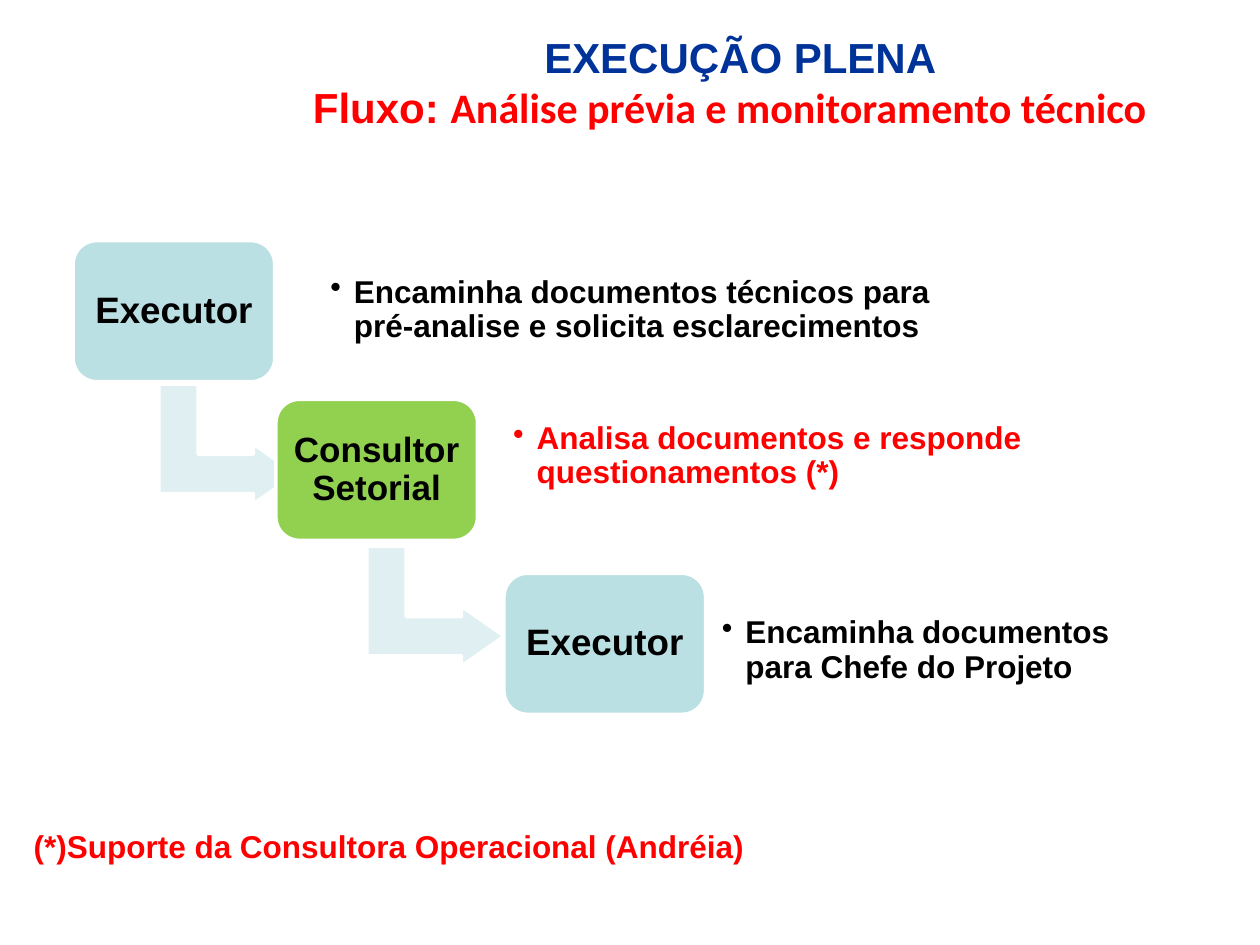
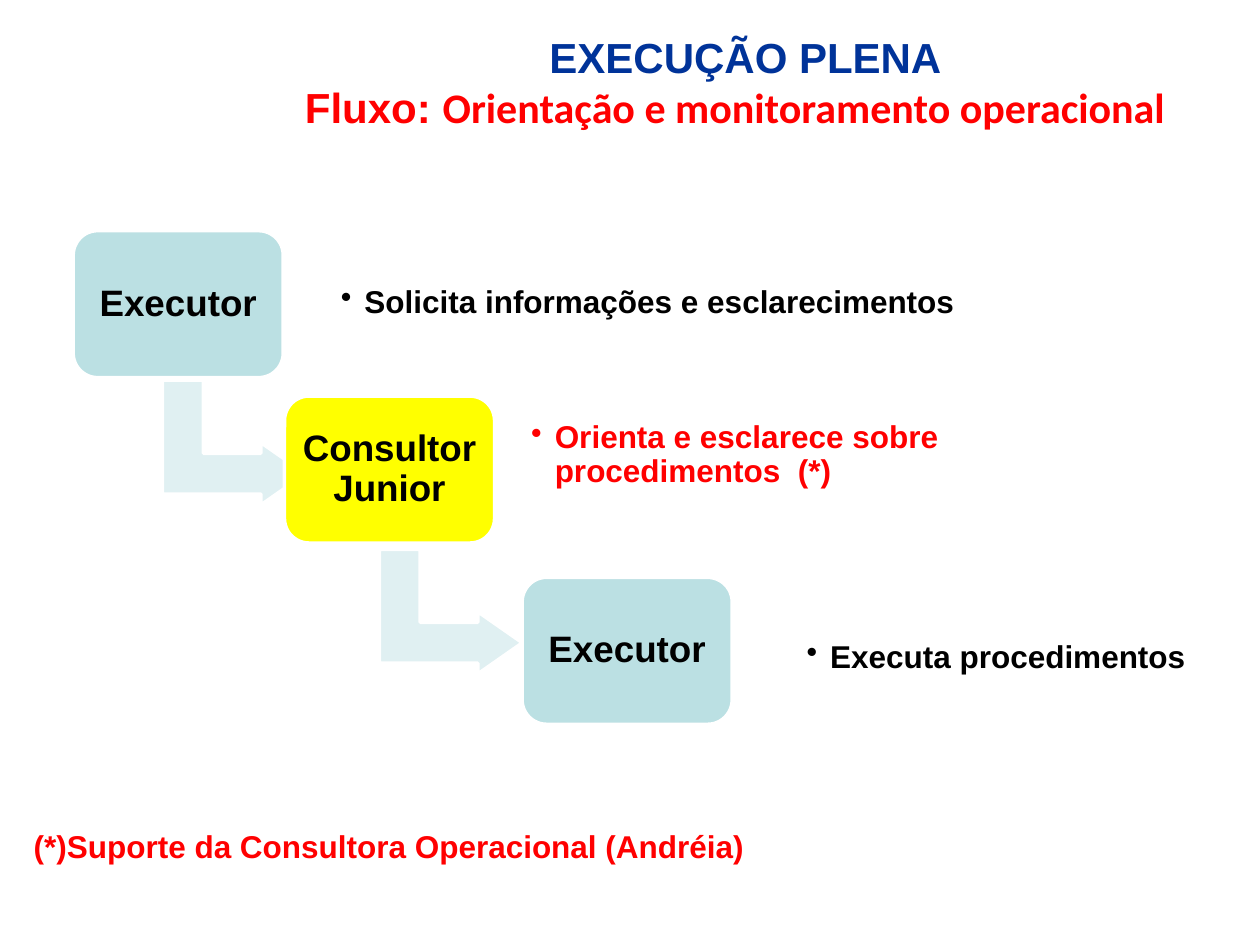
import pptx
import pptx.util
import pptx.dml.color
import pptx.enum.shapes
import pptx.enum.text
import pptx.oxml.ns
import lxml.etree

Pt = pptx.util.Pt
RGB = pptx.dml.color.RGBColor
Kind = pptx.enum.shapes.MSO_SHAPE
Align = pptx.enum.text.PP_ALIGN
Anchor = pptx.enum.text.MSO_ANCHOR

# Shared colours
NAVY = RGB(0x00, 0x33, 0x99)
RED = RGB(0xFF, 0x00, 0x00)
BLACK = RGB(0x00, 0x00, 0x00)
WHITE = RGB(0xFF, 0xFF, 0xFF)
TEAL = RGB(0xBB, 0xE0, 0xE3)
PALE = RGB(0xE0, 0xF0, 0xF2)
GREEN = RGB(0x92, 0xD0, 0x50)
YELLOW = RGB(0xFF, 0xFF, 0x00)

# Flow geometry at scale 1, in points
SPAN = 361.4
NODE = (115.2, 80.6)
STEPS = [(0, 0), (115.9, 90.7), (246.2, 190.1)]
ELBOW = (68.4, 78.5)
TURNS = [(54, 77), (57, 79)]
NOTE = 65.5

FOOT = "(*)Suporte da Consultora Operacional (Andréia)"


def say(frame, runs, size=18, color=BLACK, align=Align.LEFT, inset=(7.2, 3.6),
        anchor=Anchor.TOP, space=None, bullet=False, indent=0, more=False):
    """Write one bold paragraph; runs is a text or (text, font) pairs."""
    frame.word_wrap = True
    frame.vertical_anchor = anchor
    frame.margin_left = frame.margin_right = Pt(inset[0])
    frame.margin_top = frame.margin_bottom = Pt(inset[1])
    para = frame.add_paragraph() if more else frame.paragraphs[0]
    props = para._p.get_or_add_pPr()
    if indent:
        props.set("marL", str(Pt(indent)))
    if bullet:
        props.set("indent", str(-Pt(indent)))
        mark = lxml.etree.SubElement(props, pptx.oxml.ns.qn("a:buChar"))
        mark.set("char", "•")
    para.alignment = align
    para.line_spacing = space
    for text, face in [(runs, "Arial")] if isinstance(runs, str) else runs:
        run = para.add_run()
        run.text = text
        run.font.name = face
        run.font.size = Pt(size)
        run.font.bold = True
        run.font.color.rgb = color


def area(slide, left, top, width, height):
    box = slide.shapes.add_textbox(Pt(left), Pt(top), Pt(width), Pt(height))
    return box.text_frame


def block(slide, kind, left, top, size, fill, adjust):
    shape = slide.shapes.add_shape(
        kind, Pt(left), Pt(top), Pt(size[0]), Pt(size[1]))
    shape.shadow.inherit = False
    shape.fill.solid()
    shape.fill.fore_color.rgb = fill
    shape.line.color.rgb = WHITE
    shape.line.width = Pt(2)
    for i, value in enumerate(adjust):
        shape.adjustments[i] = value
    return shape


def title(slide, left, top, theme):
    frame = area(slide, left, top, 600, 64)
    say(frame, "EXECUÇÃO PLENA", size=24, color=NAVY,
        align=Align.CENTER, indent=12)
    say(frame, [("Fluxo: ", "Arial"), (theme, "Calibri")], size=24,
        color=RED, align=Align.CENTER, more=True)


def flow(slide, left, top, width, stages):
    """Draw a staircase of nodes, elbow arrows and notes."""
    scale = width / SPAN
    node = [side * scale for side in NODE]
    elbow = [side * scale for side in ELBOW]
    for i, (name, size, fill, note, ink, shift, wide) in enumerate(stages):
        x = left + STEPS[i][0] * scale
        y = top + STEPS[i][1] * scale
        # Arrow to the next node, lying behind it
        if i < len(TURNS):
            dx, dy = TURNS[i]
            arrow = block(slide, Kind.BENT_UP_ARROW, x + dx * scale,
                          y + dy * scale, elbow, PALE, (0.328, 0.25, 0.358))
            arrow.rotation = 90
        # Node
        card = block(slide, Kind.ROUNDED_RECTANGLE, x, y, node, fill, (0.167,))
        say(card.text_frame, name, size=size, align=Align.CENTER,
            inset=(6, 6), anchor=Anchor.MIDDLE, space=0.9)
        # Note beside the node
        frame = area(slide, x + shift[0] * scale, y + shift[1] * scale,
                     wide * scale, NOTE * scale)
        say(frame, note, color=ink, inset=(5, 5), anchor=Anchor.MIDDLE,
            space=0.9, bullet=True, indent=13.5)


def footer(slide, left, top):
    say(area(slide, left, top, 600, 30), FOOT, color=RED)


def main():
    deck = pptx.Presentation()
    deck.slide_width, deck.slide_height = Pt(720), Pt(540)
    pages = [
        ("Análise prévia e monitoramento técnico", 117, (41.8, 137.5, 361.4), [
            ("Executor", 21, TEAL, "Encaminha documentos técnicos para "
             "pré-analise e solicita esclarecimentos", BLACK, (142, 7), 386),
            ("Consultor Setorial", 20, GREEN, "Analisa documentos e responde "
             "questionamentos (*)", RED, (130.5, 0), 341),
            ("Executor", 21, TEAL, "Encaminha documentos para Chefe do "
             "Projeto", BLACK, (119.5, 11.5), 250.5)]),
        ("Orientação e monitoramento operacional", 120, (41.8, 131.8, 376.6), [
            ("Executor", 21, TEAL, "Solicita informações e esclarecimentos",
             BLACK, (142, 7), 386),
            ("Consultor Junior", 21, YELLOW, "Orienta e esclarece sobre "
             "procedimentos  (*)", RED, (130.5, 0), 341),
            ("Executor", 21, TEAL, "Executa procedimentos",
             BLACK, (151.2, 11.5), 246.5)]),
    ]
    for theme, left, box, stages in pages:
        slide = deck.slides.add_slide(deck.slide_layouts[6])
        title(slide, left, 14.5, theme)
        flow(slide, *box, stages)
        footer(slide, 12.2, 469)
    deck.save("out.pptx")


if __name__ == "__main__":
    main()
